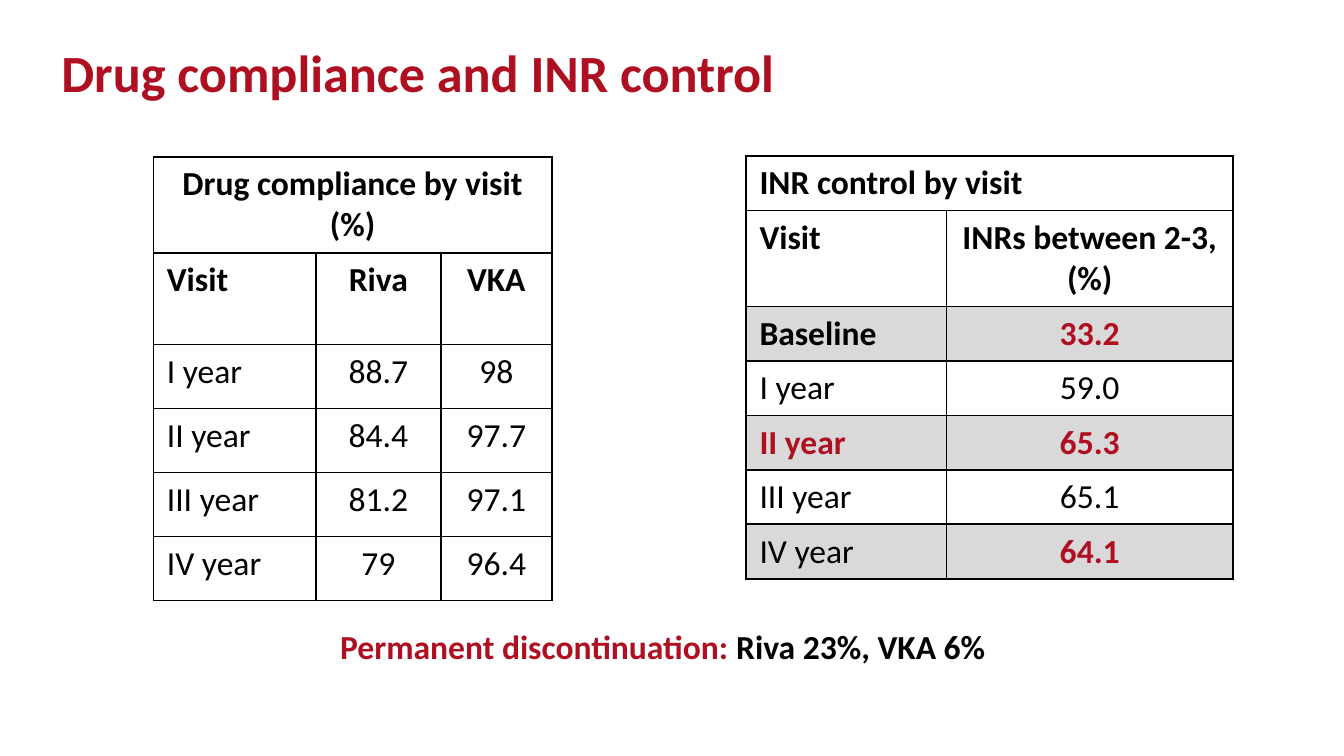
from dataclasses import dataclass

from lxml.etree import SubElement
from pptx import Presentation
from pptx.dml.color import RGBColor as Rgb
from pptx.enum.text import MSO_ANCHOR as Anchor, MSO_AUTO_SIZE as AutoSize, PP_ALIGN as Align
from pptx.oxml.ns import qn
from pptx.util import Cm, Pt


@dataclass(frozen=True)
class Theme:
    font: str = "Calibri"
    red: Rgb = Rgb(0xAE, 0x10, 0x22)
    black: Rgb = Rgb(0, 0, 0)
    gray: Rgb = Rgb(0xD9, 0xD9, 0xD9)
    title_size: Pt = Pt(28)
    body_size: Pt = Pt(18)
    border: Pt = Pt(1)


THEME = Theme()
PLAIN = {"bold": False, "color": THEME.black}
BOLD = {"bold": True, "color": THEME.black}
RED = {"bold": True, "color": THEME.red}


def set_attributes(target, values):
    for name, value in values.items():
        setattr(target, name, value)


def add_run(paragraph, text, style, size=THEME.body_size):
    run = paragraph.add_run()
    run.text = text
    set_attributes(run.font, {"name": THEME.font, "size": size, "bold": style["bold"]})
    run.font.color.rgb = style["color"]


def add_text(slide, box, runs, size, paragraph_format):
    shape = slide.shapes.add_textbox(*map(Cm, box))
    set_attributes(shape.text_frame, {
        "word_wrap": True, "auto_size": AutoSize.NONE, "vertical_anchor": Anchor.TOP})
    paragraph = shape.text_frame.paragraphs[0]
    set_attributes(paragraph, paragraph_format)
    for text, style in runs:
        add_run(paragraph, text, style, size)
    return shape


def draw_borders(cell):
    properties = cell._tc.get_or_add_tcPr()
    for side in ("lnL", "lnR", "lnT", "lnB"):
        line = SubElement(properties, qn(f"a:{side}"), w=str(THEME.border))
        fill = SubElement(line, qn("a:solidFill"))
        SubElement(fill, qn("a:srgbClr"), val=str(THEME.black))


def fill_cell(cell, text, style, centered, shaded):
    draw_borders(cell)
    if shaded:
        cell.fill.solid()
        cell.fill.fore_color.rgb = THEME.gray
    else:
        cell.fill.background()
    paragraph = cell.text_frame.paragraphs[0]
    paragraph.alignment = Align.CENTER if centered else Align.LEFT
    if text:
        add_run(paragraph, text, style)


def add_visit_table(slide, origin, widths, heights, heading, rows, heading_centered=False, shaded_rows=()):
    left, top = origin
    box = map(Cm, (left, top, sum(widths), sum(heights)))
    table = slide.shapes.add_table(len(heights), len(widths), *box).table
    set_attributes(table, {"first_row": False, "horz_banding": False})
    for column, width in zip(table.columns, widths):
        column.width = Cm(width)
    for row, height in zip(table.rows, heights):
        row.height = Cm(height)
    table.cell(0, 0).merge(table.cell(0, len(widths) - 1))
    heading_row = [(heading, BOLD)] + [("", BOLD)] * (len(widths) - 1)
    for row_index, row in enumerate([heading_row, *rows]):
        for column_index, (text, style) in enumerate(row):
            centered = heading_centered if row_index == 0 else column_index > 0
            fill_cell(table.cell(row_index, column_index), text, style, centered, row_index in shaded_rows)


def styled(style, *texts):
    return [(text, style) for text in texts]


def add_title(slide, box):
    add_text(slide, box, styled(RED, "Drug compliance and INR control"),
             THEME.title_size, {"line_spacing": Pt(25)})


def add_inr_table(slide, origin):
    rows = [
        styled(BOLD, "Visit", "INRs between 2-3, (%)"),
        [("Baseline", BOLD), ("33.2", RED)],
        styled(PLAIN, "I year", "59.0"),
        styled(RED, "II year", "65.3"),
        styled(PLAIN, "III year", "65.1"),
        [("IV year", PLAIN), ("64.1", RED)],
    ]
    add_visit_table(slide, origin, (3.79, 5.41), (1.03, 1.81, *[1.03] * 5),
                    "INR control by visit", rows, shaded_rows=(2, 4, 6))


def add_compliance_table(slide, origin):
    rows = [
        styled(BOLD, "Visit", "Riva", "VKA"),
        styled(PLAIN, "I year", "88.7", "98"),
        styled(PLAIN, "II year", "84.4", "97.7"),
        styled(PLAIN, "III year", "81.2", "97.1"),
        styled(PLAIN, "IV year", "79", "96.4"),
    ]
    add_visit_table(slide, origin, (3.07, 2.36, 2.1), (1.81, 1.73, *[1.21] * 4),
                    "Drug compliance by visit (%)", rows, heading_centered=True)


def add_discontinuation_note(slide, box):
    runs = [("Permanent discontinuation: ", RED), ("Riva 23%, VKA 6%", BOLD)]
    shape = add_text(slide, box, runs, THEME.body_size, {})
    shape.text_frame.margin_left = Cm(0.36)


def main():
    presentation = Presentation()
    set_attributes(presentation, {"slide_width": Cm(25.4), "slide_height": Cm(14.29)})
    slide = presentation.slides.add_slide(presentation.slide_layouts[6])
    add_title(slide, (0.91, 0.94, 21.2, 1.2))
    add_inr_table(slide, (14.1, 2.95))
    add_compliance_table(slide, (2.9, 2.97))
    add_discontinuation_note(slide, (6.07, 11.71, 13.26, 1.02))
    presentation.save("out.pptx")


if __name__ == "__main__":
    main()
